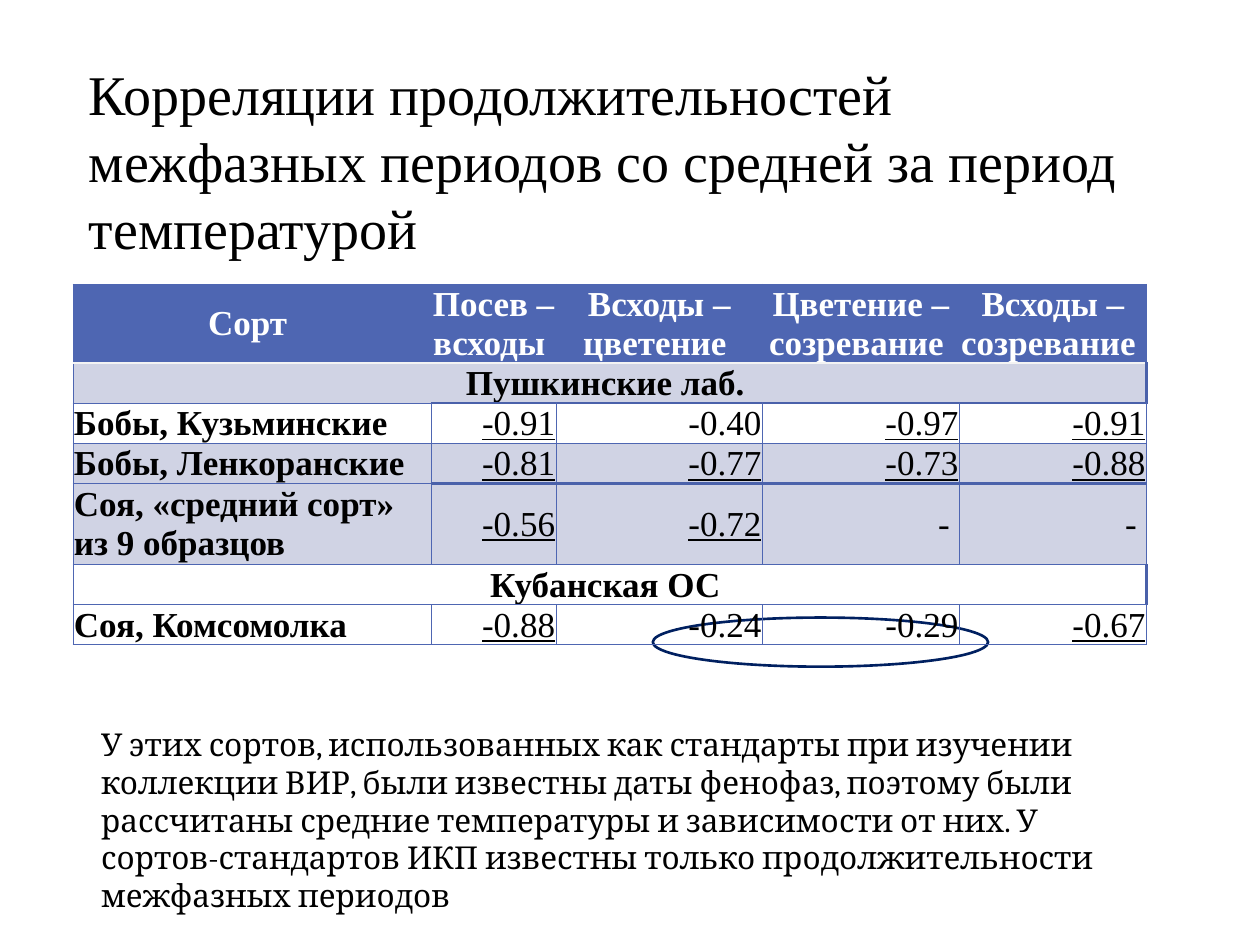
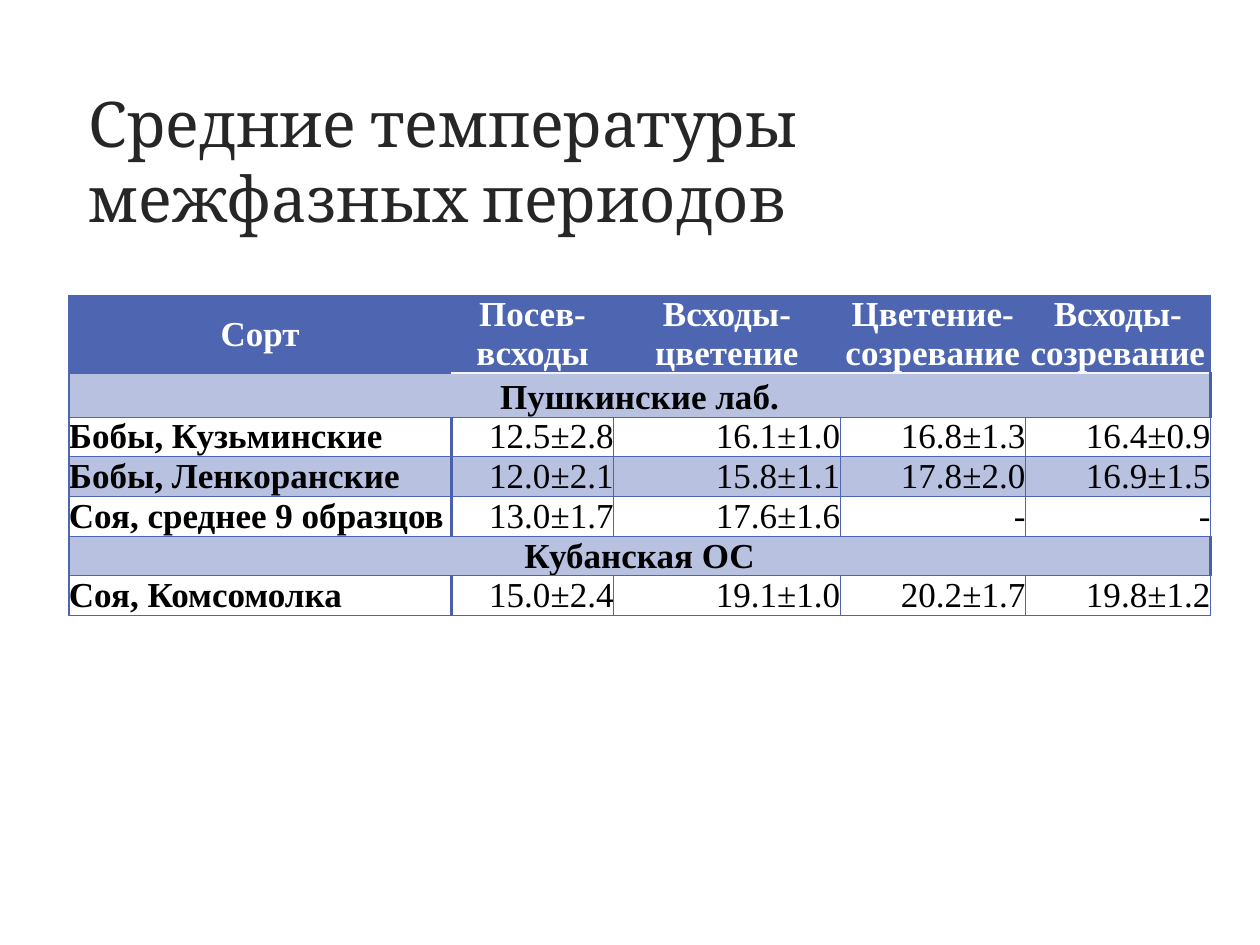
from lxml import etree
from pptx import Presentation
from pptx.dml.color import RGBColor
from pptx.enum.shapes import MSO_SHAPE
from pptx.enum.text import MSO_ANCHOR, PP_ALIGN
from pptx.oxml.ns import qn
from pptx.util import Cm, Pt

LEFT, MID, RIGHT = PP_ALIGN.LEFT, PP_ALIGN.CENTER, PP_ALIGN.RIGHT
TOP, CENTER, BOTTOM = MSO_ANCHOR.TOP, MSO_ANCHOR.MIDDLE, MSO_ANCHOR.BOTTOM
OVAL = MSO_SHAPE.OVAL

BLUE, EDGE, BLACK, WHITE = "4E66B2", "4A61AA", "000000", "FFFFFF"
SERIF, BODY = "Times New Roman", "Cambria"
HEAD_BOX = (1.54, 1.22, 22.33, 4.01)
CELL = {"name": SERIF, "size": Pt(20)}
PITCH = Pt(22.2)
# Opposite side and step to the neighbour that shares an edge
NEXT = {"B": ("T", 1, 0), "R": ("L", 0, 1)}


def color(text):
    return RGBColor.from_string(text)


def style(font, tint, form):
    for key, value in form.items():
        setattr(font, key, value)
    font.color.rgb = color(tint)


def write(slide, box, text, tint, form, anchor=TOP):
    frame = slide.shapes.add_textbox(*map(Cm, box)).text_frame
    frame.word_wrap = True
    frame.vertical_anchor = anchor
    run = frame.paragraphs[0].add_run()
    run.text = text
    style(run.font, tint, form)


def title(slide, text, tint, form):
    write(slide, HEAD_BOX, text, tint, form, CENTER)


def ring(slide, box):
    oval = slide.shapes.add_shape(OVAL, *map(Cm, box))
    oval.shadow.inherit = False
    oval.fill.background()
    oval.line.color.rgb = color("002060")
    oval.line.width = Pt(1.5)


def fill_cell(cell, text, tint, back, align, anchor, bold, pad):
    for side in ("left", "right", "top"):
        setattr(cell, "margin_" + side, Cm(pad))
    cell.margin_bottom = 0
    cell.vertical_anchor = anchor
    if back:
        cell.fill.solid()
        cell.fill.fore_color.rgb = color(back)
    else:
        cell.fill.background()
    par = cell.text_frame.paragraphs[0]
    par.alignment = align
    par.line_spacing = PITCH
    run = par.add_run()
    run.text = text
    strong = text.startswith("-0.") and float(text) <= -0.5
    style(run.font, tint, {**CELL, "bold": bold, "underline": strong})


def rule_cell(cell, lines):
    props = cell._tc.get_or_add_tcPr()
    for spot, side in enumerate("LRTB"):
        tint, width = lines[side]
        line = etree.Element(qn("a:ln" + side), w=str(Pt(width)))
        fill = etree.SubElement(line, qn("a:solidFill"))
        etree.SubElement(fill, qn("a:srgbClr"), val=tint)
        props.insert(spot, line)


def grid(slide, spot, cols, highs, rows, bands, band, thin, pad, heavy):
    """Draw a table; a row with one text spans all columns."""
    box = (*spot, sum(cols), sum(highs))
    frame = slide.shapes.add_table(len(rows), len(cols), *map(Cm, box))
    table = frame.table
    for col, width in zip(table.columns, cols):
        col.width = Cm(width)
    for row, high in zip(table.rows, highs):
        row.height = Cm(high)

    # Texts and fills
    for r, texts in enumerate(rows):
        span = len(texts) == 1
        if span:
            table.cell(r, 0).merge(table.cell(r, len(cols) - 1))
        for c, text in enumerate(texts):
            back = BLUE if r == 0 else band if r in bands else None
            fill_cell(table.cell(r, c), text, BLACK if r else WHITE, back,
                      MID if span or r == 0 else RIGHT if c else LEFT,
                      BOTTOM if span else CENTER, r == 0 or c == 0, pad)

    # Thin lines everywhere, then the heavy ones on both cells they divide
    marks = {(r, c): dict.fromkeys("LRTB", (BLUE, thin))
             for r in range(len(rows)) for c in range(len(cols))}
    ends = [(r, len(cols) - 1, "R", EDGE)
            for r, texts in enumerate(rows) if len(texts) == 1]
    for r, c, side, tint in heavy + ends:
        back, down, over = NEXT[side]
        marks[r, c][side] = (tint, 1.5)
        if (r + down, c + over) in marks:
            marks[r + down, c + over][back] = (tint, 1.5)
        elif side == "R":
            marks[r, 0][side] = (tint, 1.5)
    for (r, c), lines in marks.items():
        rule_cell(table.cell(r, c), lines)


def links(slide):
    """Correlations of phase lengths with temperature."""
    title(slide, "Корреляции продолжительностей межфазных периодов со средней "
          "за период температурой", BLACK, {"name": SERIF, "size": Pt(32)})
    ring(slide, (13.16, 12.45, 6.76, 0.99))
    rows = [
        ["Сорт ", "Посев – всходы ", "Всходы – цветение ",
         "Цветение – созревание ", "Всходы – созревание "],
        ["Пушкинские лаб. "],
        ["Бобы, Кузьминские", "-0.91", "-0.40", "-0.97", "-0.91"],
        ["Бобы, Ленкоранские", "-0.81", "-0.77", "-0.73", "-0.88"],
        ["Соя, «средний сорт» из 9 образцов", "-0.56", "-0.72", "- ", "- "],
        ["Кубанская ОС "],
        ["Соя, Комсомолка", "-0.88", "-0.24", "-0.29", "-0.67"],
    ]
    heavy = [(0, c, "B", "F3F3F3") for c in range(5)]
    heavy += [(r, c, "B", EDGE) for r in (1, 3) for c in range(1, 5)]
    grid(slide, (1.47, 5.73), [7.22, 2.52, 4.16, 3.97, 3.77],
         [1.57, 0.81, 0.81, 0.81, 1.63, 0.81, 0.81],
         rows, (1, 3, 4), "D0D3E4", 0.5, 0.02, heavy)
    write(slide, (1.79, 14.49, 21.23, 4.11),
          "У этих сортов, использованных как стандарты при изучении коллекции "
          "ВИР, были известны даты фенофаз, поэтому были рассчитаны средние "
          "температуры и зависимости от них. У сортов-стандартов ИКП известны "
          "только продолжительности межфазных периодов",
          BLACK, {"name": BODY, "size": Pt(18)})


def means(slide):
    """Mean temperatures of the phases."""
    title(slide, "Средние температуры межфазных периодов", "262626",
          {"name": BODY, "size": Pt(36)})
    rows = [
        ["Сорт", "Посев-всходы", "Всходы-цветение",
         "Цветение-созревание", "Всходы-созревание"],
        ["Пушкинские лаб."],
        ["Бобы, Кузьминские", "12.5±2.8", "16.1±1.0", "16.8±1.3", "16.4±0.9"],
        ["Бобы, Ленкоранские", "12.0±2.1", "15.8±1.1", "17.8±2.0", "16.9±1.5"],
        ["Соя, среднее 9 образцов", "13.0±1.7", "17.6±1.6", "-", "-"],
        ["Кубанская ОС"],
        ["Соя, Комсомолка", "15.0±2.4", "19.1±1.0", "20.2±1.7", "19.8±1.2"],
    ]
    heavy = [(0, c, "B", "F4F4F4") for c in range(1, 5)]
    heavy += [(r, 0, "R", EDGE) for r in (2, 3, 4, 6)]
    grid(slide, (1.39, 5.95), [7.71, 3.27, 4.57, 3.73, 3.73],
         [1.57, 0.89] + [0.8] * 5,
         rows, (1, 3, 5), "B8C2E0", 0.75, 0, heavy)


def main():
    deck = Presentation()
    deck.slide_width, deck.slide_height = Cm(25.4), Cm(19.05)
    for build in (links, means):
        build(deck.slides.add_slide(deck.slide_layouts[6]))
    deck.save("out.pptx")


if __name__ == "__main__":
    main()
